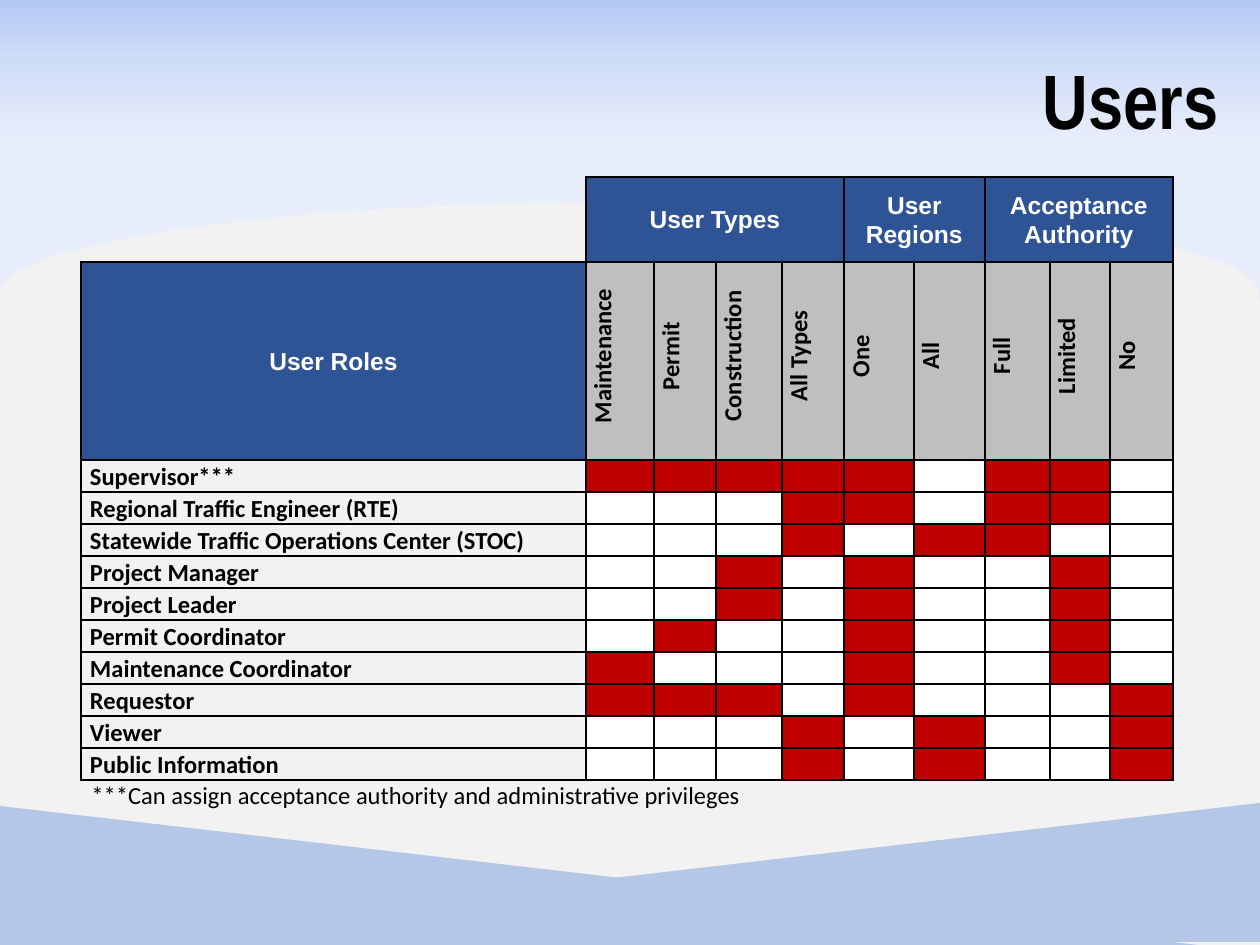
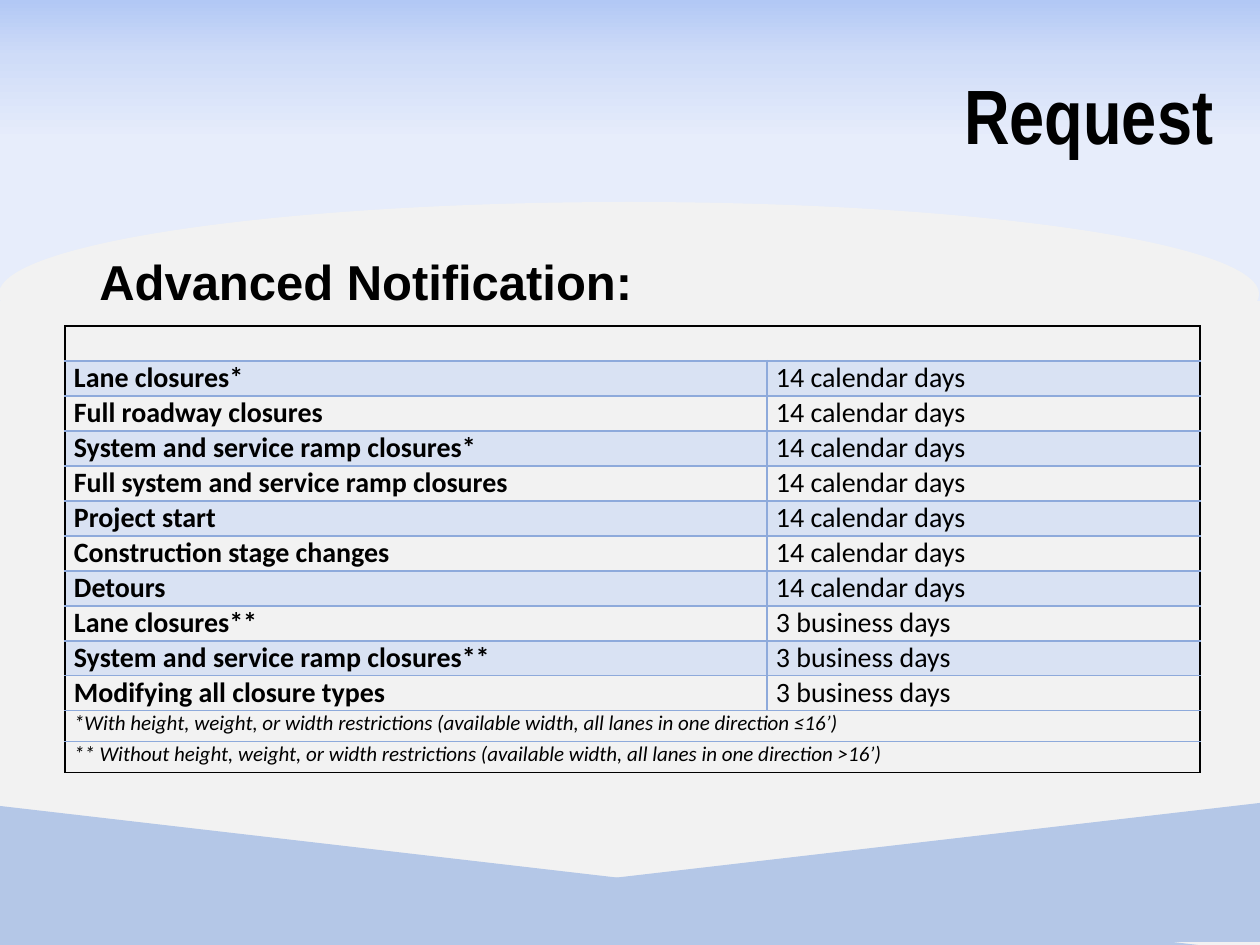
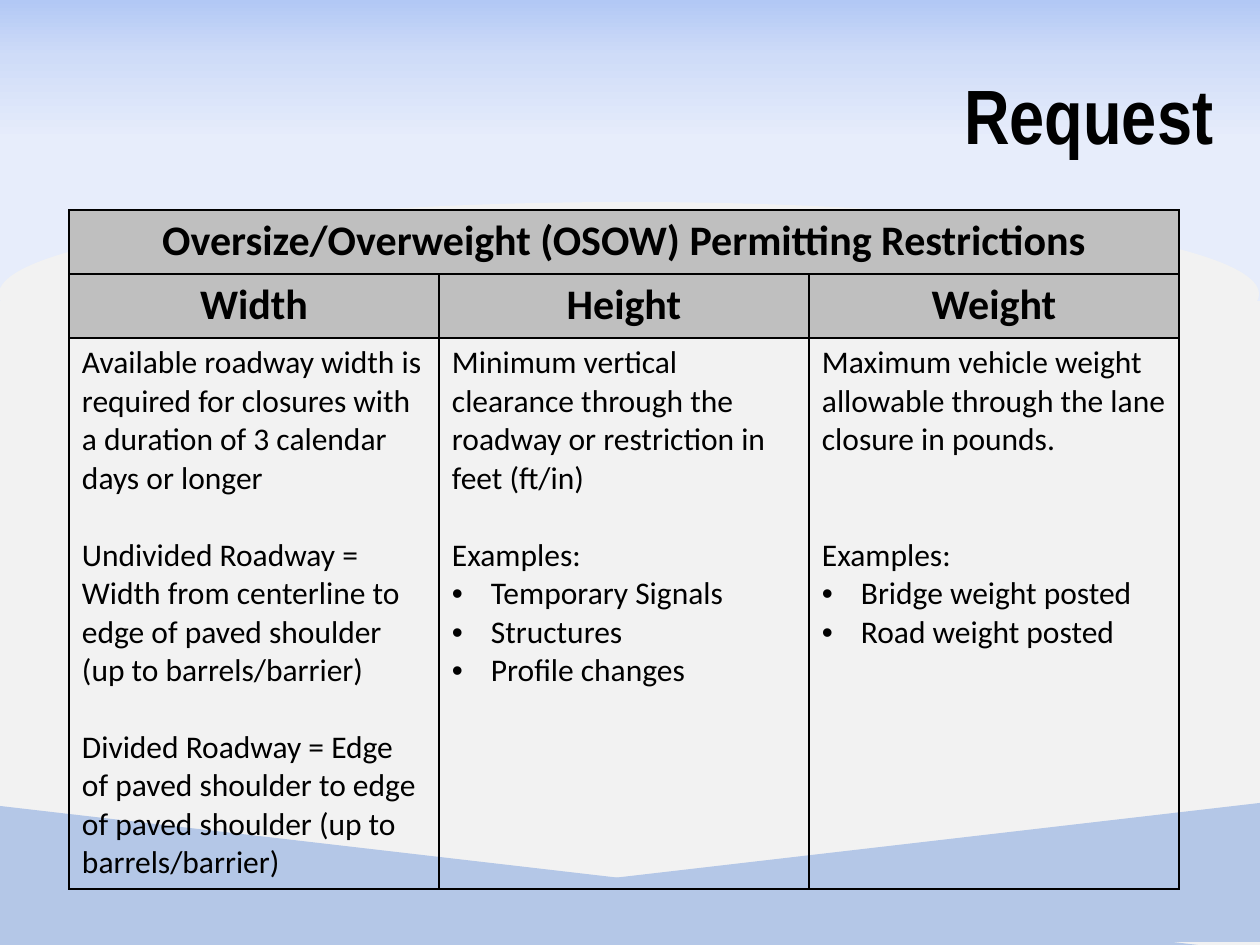
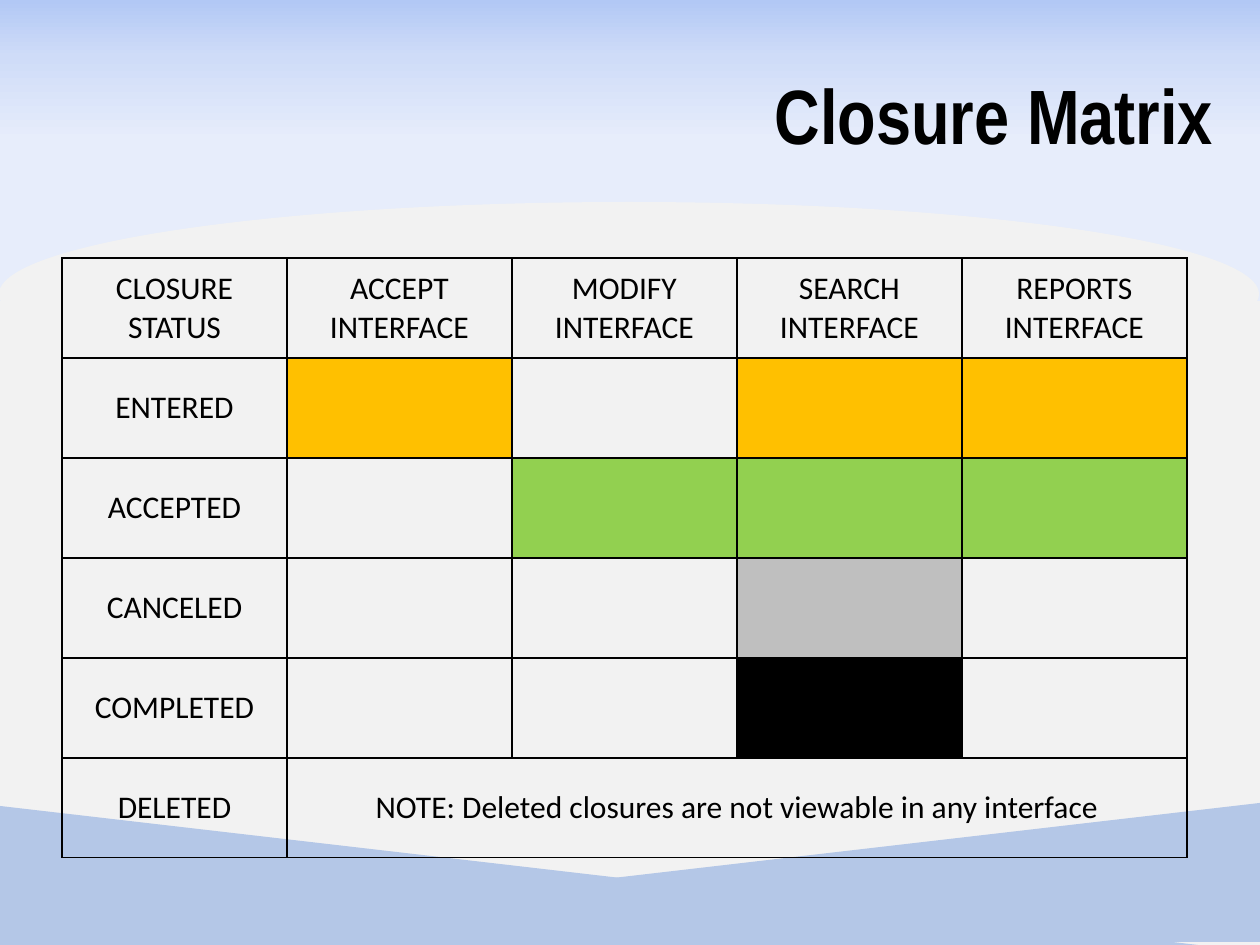
from copy import deepcopy
from functools import partial

from lxml import etree
from pptx import Presentation
from pptx.dml.color import RGBColor
from pptx.enum.shapes import MSO_SHAPE
from pptx.enum.text import MSO_ANCHOR, PP_ALIGN
from pptx.oxml.ns import qn
from pptx.util import Pt

RECTANGLE = MSO_SHAPE.RECTANGLE
ELLIPSE = MSO_SHAPE.OVAL
TRIANGLE = MSO_SHAPE.RIGHT_TRIANGLE
LEFT, CENTER, RIGHT = PP_ALIGN.LEFT, PP_ALIGN.CENTER, PP_ALIGN.RIGHT
TOP, MIDDLE = MSO_ANCHOR.TOP, MSO_ANCHOR.MIDDLE

EMU_PER_PX = 914400 / 126
SLIDE_WIDTH, SLIDE_HEIGHT = 1260, 945
COLORS = {
    "paper": "F2F2F2",
    "wave": "B4C7E7",
    "black": "000000",
    "white": "FFFFFF",
    "header": "2F5496",
    "gray": "BFBFBF",
    "red": "C00000",
    "stripe": "D9E2F3",
    "rule": "8EAADB",
    "entered": "FFC000",
    "accepted": "92D050",
}
SKY_STOPS = [(0, "B2C8F5"), (0.19, "CFDCF8"), (0.47, "E7EDFB")]
BODY_FONT, HEADING_FONT, TITLE_FONT = "Calibri", "Arial", "Arial Narrow"
BLACK_EDGE = ("black", 1)
RULE_EDGE = ("rule", 1)
GRID = (BLACK_EDGE,) * 4
WIDE_MARGINS = (13, 6)
TIGHT_MARGINS = (9, 0)
TITLE_BOX = (140, 28, 1086, 183)

USER_GROUPS = [("User Types", 1, 4), ("User Regions", 5, 6), ("Acceptance Authority", 7, 9)]
USER_COLUMNS = ["Maintenance", "Permit", "Construction", "All Types", "One", "All",
                "Full", "Limited", "No"]
USER_ROLES = [
    ("Supervisor***", "XXXXX.XX."),
    ("Regional Traffic Engineer (RTE)", "...XX.XX."),
    ("Statewide Traffic Operations Center (STOC)", "...X.XX.."),
    ("Project Manager", "..X.X..X."),
    ("Project Leader", "..X.X..X."),
    ("Permit Coordinator", ".X..X..X."),
    ("Maintenance Coordinator", "X...X..X."),
    ("Requestor", "XXX.X...X"),
    ("Viewer", "...X.X..X"),
    ("Public Information", "...X.X..X"),
]
NOTICE_PERIODS = [
    ("14 calendar days", ["Lane closures*", "Full roadway closures",
                          "System and service ramp closures*",
                          "Full system and service ramp closures", "Project start",
                          "Construction stage changes", "Detours"]),
    ("3 business days", ["Lane closures**", "System and service ramp closures**",
                         "Modifying all closure types"]),
]
NOTICE_NOTES = [
    "*With height, weight, or width restrictions (available width, all lanes in one direction ≤16’)",
    "** Without height, weight, or width restrictions (available width, all lanes in one direction >16’)",
]
RESTRICTIONS = [
    ("Width", 22, [
        "Available roadway width is required for closures with a duration of 3 calendar days or longer",
        "Undivided Roadway = Width from centerline to edge of paved shoulder (up to barrels/barrier)",
        "Divided Roadway = Edge of paved shoulder to edge of paved shoulder (up to barrels/barrier)",
    ], []),
    ("Height", 22, [
        "Minimum vertical clearance through the roadway or restriction in feet (ft/in)",
        "Examples:",
    ], ["Temporary Signals", "Structures", "Profile changes"]),
    ("Weight", 44, [
        "Maximum vehicle weight allowable through the lane closure in pounds.",
        "Examples:",
    ], ["Bridge weight posted", "Road weight posted"]),
]
CLOSURE_HEADINGS = ["CLOSURE STATUS", "ACCEPT\nINTERFACE", "MODIFY\nINTERFACE",
                    "SEARCH\nINTERFACE", "REPORTS\nINTERFACE"]
CLOSURE_STATUSES = [
    ("ENTERED", "entered", (1, 3, 4)),
    ("ACCEPTED", "accepted", (2, 3, 4)),
    ("CANCELED", "gray", (3,)),
    ("COMPLETED", "black", (3,)),
    ("DELETED", None, ()),
]


def px(length):
    return round(length * EMU_PER_PX)


def rgb(name):
    return RGBColor.from_string(COLORS[name])


def format_text(text_frame, size, font=BODY_FONT, color="black", bold=False,
                italic=False, align=LEFT, spacing=None):
    for paragraph in text_frame.paragraphs:
        paragraph.alignment = align
        if spacing:
            paragraph.line_spacing = spacing
        for run in paragraph.runs:
            run.font.size = Pt(size)
            run.font.name = font
            run.font.bold = bold
            run.font.italic = italic
            run.font.color.rgb = rgb(color)
        if not paragraph.runs:
            paragraph._p.get_or_add_endParaRPr().sz = size * 100


def add_text(slide, box, text, anchor=TOP, **text_style):
    text_frame = slide.shapes.add_textbox(*map(px, box)).text_frame
    text_frame.word_wrap = True
    text_frame.vertical_anchor = anchor
    text_frame.text = text
    format_text(text_frame, **text_style)


def add_band(slide, preset, box, color):
    shape = slide.shapes.add_shape(preset, *map(px, box))
    shape.shadow.inherit = False
    shape.line.fill.background()
    shape.fill.solid()
    shape.fill.fore_color.rgb = rgb(color)
    return shape


def add_backdrop(slide):
    slide.background.fill.solid()
    slide.background.fill.fore_color.rgb = rgb("paper")
    sky = add_band(slide, RECTANGLE, (0, 0, SLIDE_WIDTH, 301), "wave")
    sky.fill.gradient()
    sky.fill.gradient_angle = 270
    stop_list = sky.element.xpath(".//a:gsLst")[0]
    stop_list.append(deepcopy(stop_list[0]))
    for stop, (position, color) in zip(sky.fill.gradient_stops, SKY_STOPS):
        stop.position = position
        stop.color.rgb = RGBColor.from_string(color)
    add_band(slide, ELLIPSE, (-1, 202, SLIDE_WIDTH, 184), "paper")
    add_band(slide, TRIANGLE, (0, 806, 1198, 139), "wave")
    right_wave = add_band(slide, TRIANGLE, (62, 803, 1198, 139), "wave")
    right_wave.element.spPr.xfrm.set("flipH", "1")


def start_slide(presentation, title, title_box=TITLE_BOX):
    slide = presentation.slides.add_slide(presentation.slide_layouts[6])
    add_backdrop(slide)
    add_text(slide, title_box, title, MIDDLE, size=44, font=TITLE_FONT, bold=True,
             align=RIGHT, spacing=0.9)
    return slide


def add_grid(slide, left, top, widths, heights):
    box = (left, top, sum(widths), sum(heights))
    table = slide.shapes.add_table(len(heights), len(widths), *map(px, box)).table
    table.first_row = False
    table.horz_banding = False
    for column, width in zip(table.columns, widths):
        column.width = px(width)
    for row, height in zip(table.rows, heights):
        row.height = px(height)
    return table


def set_edges(cell, edges):
    properties = cell._tc.get_or_add_tcPr()
    for side, edge in zip("LRTB", edges):
        line = etree.SubElement(properties, qn(f"a:ln{side}"))
        if edge is None:
            etree.SubElement(line, qn("a:noFill"))
            continue
        color, width = edge
        line.set("w", str(Pt(width)))
        fill = etree.SubElement(line, qn("a:solidFill"))
        etree.SubElement(fill, qn("a:srgbClr"), val=COLORS[color])


def fill_cell(cell, text="", fill=None, edges=GRID, margins=WIDE_MARGINS, anchor=TOP,
              **text_style):
    set_edges(cell, edges)
    if fill:
        cell.fill.solid()
        cell.fill.fore_color.rgb = rgb(fill)
    else:
        cell.fill.background()
    cell.margin_left = cell.margin_right = px(margins[0])
    cell.margin_top = cell.margin_bottom = px(margins[1])
    cell.vertical_anchor = anchor
    cell.text_frame.text = text
    format_text(cell.text_frame, **text_style)


def add_bullet(paragraph, indent):
    properties = paragraph._p.get_or_add_pPr()
    properties.set("marL", str(px(indent)))
    properties.set("indent", str(-px(indent)))
    etree.SubElement(properties, qn("a:buFont"), typeface=HEADING_FONT)
    etree.SubElement(properties, qn("a:buChar"), char="•")


def add_user_table(slide, left, top):
    widths = [505, 68, 62, 66, 62, 70, 71, 65, 60, 63]
    table = add_grid(slide, left, top, widths, [85, 198] + [32] * len(USER_ROLES))
    put = partial(fill_cell, margins=TIGHT_MARGINS, anchor=MIDDLE, size=14, bold=True,
                  spacing=1.07)
    put_header = partial(put, fill="header", font=HEADING_FONT, color="white", align=CENTER)

    put(table.cell(0, 0), edges=(None, BLACK_EDGE, None, BLACK_EDGE))
    for group, first, last in USER_GROUPS:
        for column in range(first, last + 1):
            put_header(table.cell(0, column), group if column == first else "")
        table.cell(0, first).merge(table.cell(0, last))

    put_header(table.cell(1, 0), "User Roles")
    for column, heading in enumerate(USER_COLUMNS, 1):
        cell = table.cell(1, column)
        put(cell, heading, fill="gray", align=CENTER)
        cell._tc.tcPr.set("vert", "vert270")
        cell.text_frame.paragraphs[0]._p.get_or_add_pPr().set("marL", str(px(10)))

    for row, (role, marks) in enumerate(USER_ROLES, 2):
        put(table.cell(row, 0), role, fill="paper")
        for column, mark in enumerate(marks, 1):
            put(table.cell(row, column), fill="red" if mark == "X" else "white")


def add_notice_table(slide, left, top):
    notices = [(closure, period) for period, closures in NOTICE_PERIODS for closure in closures]
    note_count = len(NOTICE_NOTES)
    table = add_grid(slide, left, top, [702, 433],
                     [35] * (len(notices) + 1) + [31] * note_count)
    put = partial(fill_cell, margins=TIGHT_MARGINS)
    heavy_rule = ("rule", 1.5)

    def put_wide_row(row, text, top_edge, bottom_edge, **text_style):
        for column, content in enumerate((text, "")):
            put(table.cell(row, column), content,
                edges=(BLACK_EDGE, BLACK_EDGE, top_edge, bottom_edge), **text_style)
        table.cell(row, 0).merge(table.cell(row, 1))

    put_wide_row(0, "", BLACK_EDGE, heavy_rule, size=16)
    for row, (closure, period) in enumerate(notices, 1):
        fill = "stripe" if row % 2 else None
        top_edge = heavy_rule if row == 1 else RULE_EDGE
        put(table.cell(row, 0), closure, fill, size=16, bold=True,
            edges=(BLACK_EDGE, RULE_EDGE, top_edge, RULE_EDGE))
        put(table.cell(row, 1), period, fill, size=16,
            edges=(RULE_EDGE, BLACK_EDGE, top_edge, RULE_EDGE))
    for index, note in enumerate(NOTICE_NOTES, 1):
        put_wide_row(len(notices) + index, note, RULE_EDGE,
                     BLACK_EDGE if index == note_count else RULE_EDGE,
                     fill="paper", size=12, italic=True)


def add_restriction_table(slide, left, top):
    table = add_grid(slide, left, top, [370] * len(RESTRICTIONS), [64, 64, 551])
    put_header = partial(fill_cell, fill="gray", size=24, bold=True, align=CENTER)
    for column, (heading, gap, statements, examples) in enumerate(RESTRICTIONS):
        title = "" if column else "Oversize/Overweight (OSOW) Permitting Restrictions"
        put_header(table.cell(0, column), title)
        put_header(table.cell(1, column), heading)
        cell = table.cell(2, column)
        fill_cell(cell, "\n".join(statements + examples), size=18)
        paragraphs = cell.text_frame.paragraphs
        for paragraph in paragraphs[1:len(statements)]:
            paragraph.space_before = Pt(gap)
        for paragraph in paragraphs[len(statements):]:
            add_bullet(paragraph, 39)
    table.cell(0, 0).merge(table.cell(0, len(RESTRICTIONS) - 1))


def add_closure_table(slide, left, top):
    column_count = len(CLOSURE_HEADINGS)
    table = add_grid(slide, left, top, [225] * column_count,
                     [100] * (len(CLOSURE_STATUSES) + 1))
    put = partial(fill_cell, anchor=MIDDLE, size=18, align=CENTER)
    for column, heading in enumerate(CLOSURE_HEADINGS):
        put(table.cell(0, column), heading)
    for row, (status, color, visible_columns) in enumerate(CLOSURE_STATUSES, 1):
        put(table.cell(row, 0), status)
        for column in range(1, column_count):
            note = ("NOTE: Deleted closures are not viewable in any interface"
                    if status == "DELETED" and column == 1 else "")
            put(table.cell(row, column), note, color if column in visible_columns else None)
    last_row = len(CLOSURE_STATUSES)
    table.cell(last_row, 1).merge(table.cell(last_row, column_count - 1))


def main():
    presentation = Presentation()
    presentation.slide_width = px(SLIDE_WIDTH)
    presentation.slide_height = px(SLIDE_HEIGHT)

    users = start_slide(presentation, "Users", (145, 13, 1086, 183))
    add_user_table(users, 81, 177)
    add_text(users, (79, 774, 950, 43),
             "***Can assign acceptance authority and administrative privileges", size=14)

    notification = start_slide(presentation, "Request")
    add_text(notification, (87, 252, 1086, 600), "Advanced Notification:", size=28,
             font=HEADING_FONT, bold=True, spacing=0.9)
    add_notice_table(notification, 65, 326)

    restrictions = start_slide(presentation, "Request")
    add_restriction_table(restrictions, 69, 210)

    closures = start_slide(presentation, "Closure Matrix")
    add_closure_table(closures, 62, 258)

    presentation.save("out.pptx")


if __name__ == "__main__":
    main()
